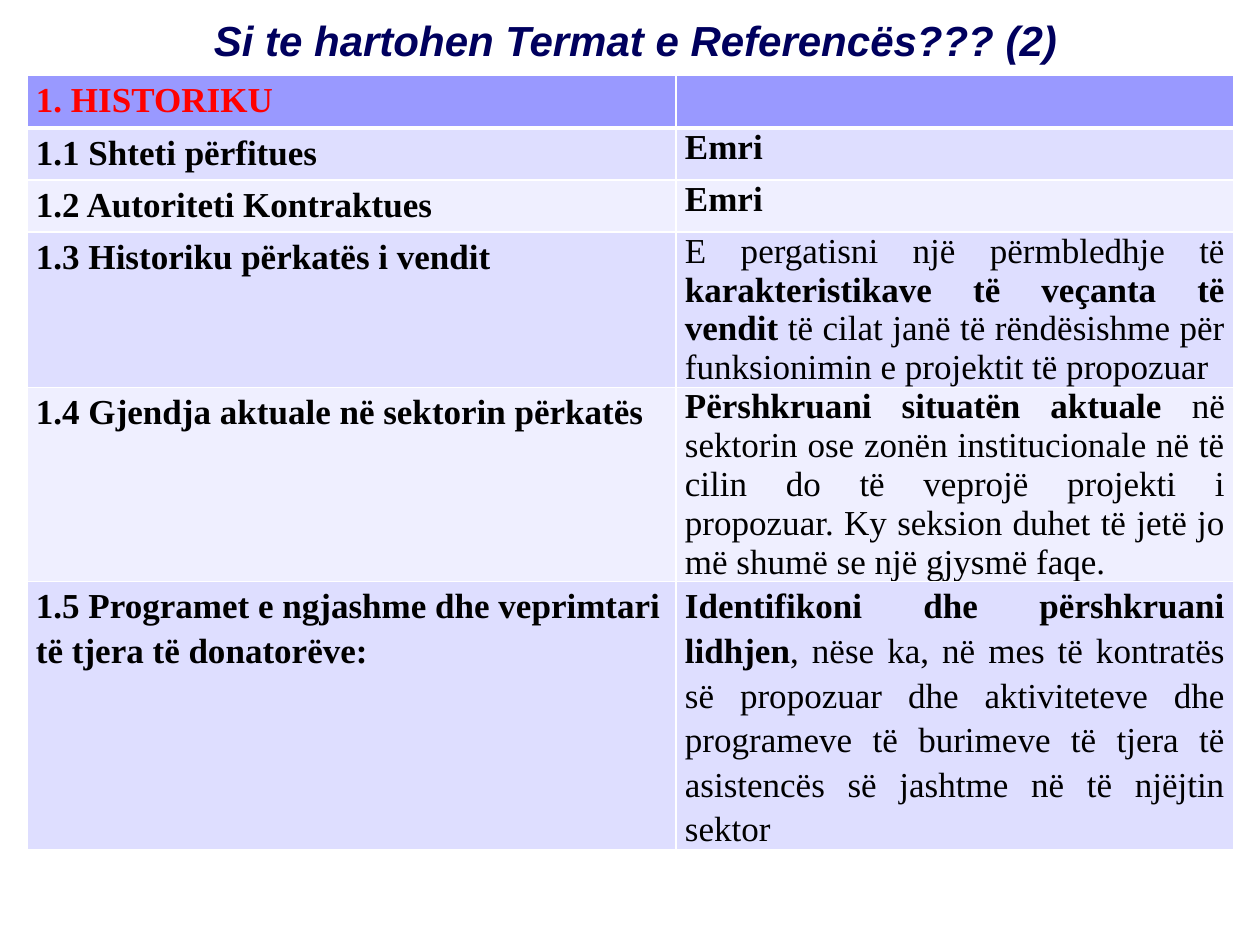
from dataclasses import dataclass

from lxml.etree import SubElement
from pptx import Presentation
from pptx.dml.color import RGBColor
from pptx.enum.text import MSO_ANCHOR as Anchor, PP_ALIGN as Align
from pptx.oxml.ns import qn
from pptx.util import Emu, Pt

EMU_PER_PX = 914400 // 126
COLORS = {
    "title": "00005E", "heading": "FF0000", "text": "000000", "border": "FFFFFF",
    "header": "9999FF", "odd": "DEDEFF", "even": "EFEFFF",
}
TITLE_FONT = {"name": "Arial", "size": Pt(24), "bold": True, "italic": True}
CELL_FONT = {"name": "Times New Roman", "size": Pt(20)}
CELL_FORMAT = {"margin_left": Emu(9 * EMU_PER_PX), "margin_right": Emu(9 * EMU_PER_PX),
               "margin_top": 0, "margin_bottom": 0, "vertical_anchor": Anchor.TOP}
COLUMN_WIDTHS = (649, 558)
HEADER_HEIGHT, ROW_HEIGHT = 53, 52
LOOSE = 1.15


@dataclass(frozen=True)
class Span:
    text: str
    bold: bool = False


@dataclass(frozen=True)
class Entry:
    label: str
    spans: tuple[Span, ...] = ()
    align: Align = Align.JUSTIFY
    spacing: float | None = None


ENTRIES = (
    Entry("1. HISTORIKU"),
    Entry("1.1 Shteti përfitues", (Span("Emri", True),), Align.LEFT),
    Entry("1.2 Autoriteti Kontraktues", (Span("Emri", True),), Align.LEFT),
    Entry("1.3 Historiku përkatës i vendit", (
        Span("E pergatisni një përmbledhje të "),
        Span("karakteristikave të veçanta të vendit", True),
        Span(" të cilat janë të rëndësishme për funksionimin e projektit të propozuar"))),
    Entry("1.4 Gjendja aktuale në sektorin përkatës", (
        Span("Përshkruani situatën aktuale", True),
        Span(" në sektorin ose zonën institucionale në të cilin do të veprojë projekti "
             "i propozuar. Ky seksion duhet të jetë jo më shumë se një gjysmë faqe."))),
    Entry("1.5 Programet e ngjashme dhe veprimtari të tjera të donatorëve:", (
        Span("Identifikoni dhe përshkruani lidhjen", True),
        Span(", nëse ka, në mes të kontratës së propozuar dhe aktiviteteve dhe programeve "
             "të burimeve të tjera të asistencës së jashtme në të njëjtin sektor")),
        spacing=LOOSE),
)


def px(count: int) -> Emu:
    return Emu(count * EMU_PER_PX)


def apply(target, values: dict) -> None:
    for name, value in values.items():
        setattr(target, name, value)


def set_font(font, values: dict, color: str) -> None:
    apply(font, values)
    font.color.rgb = RGBColor.from_string(COLORS[color])


def set_borders(cell, top: int, bottom: int) -> None:
    """Draw all four cell edges; top and bottom are widths in points."""
    properties = cell._tc.get_or_add_tcPr()
    for tag, width in (("lnL", 1), ("lnR", 1), ("lnT", top), ("lnB", bottom)):
        line = SubElement(properties, qn(f"a:{tag}"), w=str(Pt(width)))
        fill = SubElement(line, qn("a:solidFill"))
        SubElement(fill, qn("a:srgbClr"), val=COLORS["border"])


def fill_cell(cell, spans: tuple[Span, ...], align: Align, spacing: float | None,
              color: str) -> None:
    para = cell.text_frame.paragraphs[0]
    apply(para, {"alignment": align, "line_spacing": spacing})
    for span in spans:
        run = para.add_run()
        run.text = span.text
        set_font(run.font, CELL_FONT | {"bold": span.bold}, color)


def add_title(page) -> None:
    title = page.shapes.title
    apply(title, {"left": px(79), "top": px(5), "width": px(1113), "height": px(69)})
    frame = title.text_frame
    frame.text = "Si te hartohen Termat e Referencës??? (2)"
    apply(frame, {"vertical_anchor": Anchor.MIDDLE, "word_wrap": True})
    para = frame.paragraphs[0]
    para.alignment = Align.CENTER
    set_font(para.runs[0].font, TITLE_FONT, "title")


def add_terms_table(page) -> None:
    box = page.shapes.add_table(len(ENTRIES), len(COLUMN_WIDTHS), px(27), px(75),
                                px(sum(COLUMN_WIDTHS)), px(823))
    table = box.table
    for column, width in zip(table.columns, COLUMN_WIDTHS):
        column.width = px(width)
    for index, (row, entry) in enumerate(zip(table.rows, ENTRIES)):
        is_header = index == 0
        row.height = px(HEADER_HEIGHT if is_header else ROW_HEIGHT)
        band = "header" if is_header else ("even", "odd")[index % 2]
        for cell in row.cells:
            apply(cell, CELL_FORMAT)
            set_borders(cell, top=3 if index == 1 else 1, bottom=3 if is_header else 1)
            cell.fill.solid()
            cell.fill.fore_color.rgb = RGBColor.from_string(COLORS[band])
        label, detail = row.cells
        fill_cell(label, (Span(entry.label, True),), Align.LEFT, LOOSE,
                  "heading" if is_header else "text")
        fill_cell(detail, entry.spans, entry.align, entry.spacing, "text")
    box.height = px(823)


def main() -> None:
    deck = Presentation()
    apply(deck, {"slide_width": px(1260), "slide_height": px(945)})
    page = deck.slides.add_slide(deck.slide_layouts.get_by_name("Title Only"))
    add_title(page)
    add_terms_table(page)
    deck.save("out.pptx")


if __name__ == "__main__":
    main()
